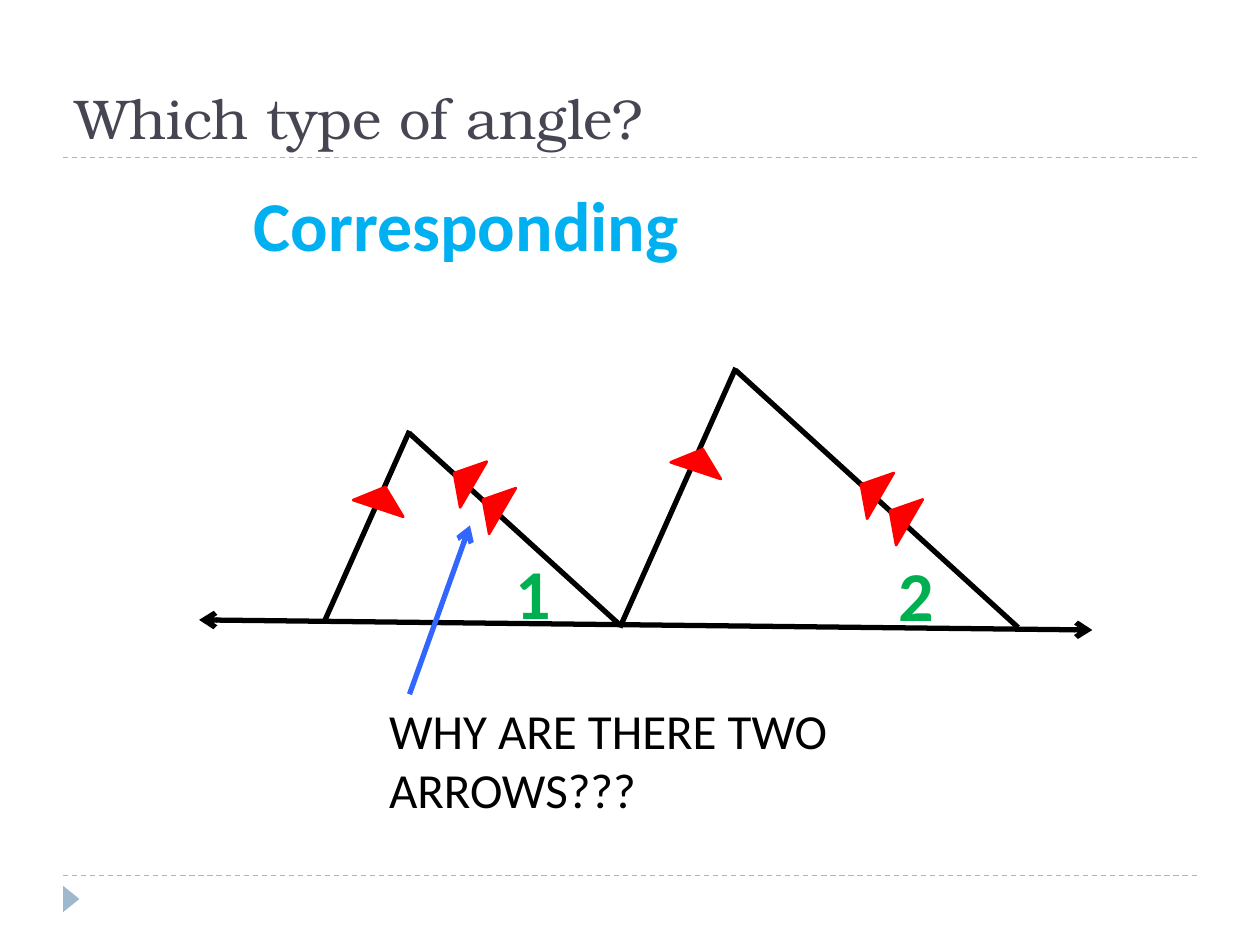
from dataclasses import dataclass

from lxml.etree import SubElement
from pptx import Presentation
from pptx.dml.color import RGBColor
from pptx.enum.dml import MSO_LINE
from pptx.enum.shapes import MSO_CONNECTOR, MSO_SHAPE
from pptx.enum.text import MSO_ANCHOR, MSO_AUTO_SIZE, PP_ALIGN
from pptx.oxml.ns import qn
from pptx.util import Inches, Pt


@dataclass(frozen=True)
class Theme:
    heading_font: str = "TeX Gyre Bonum"
    body_font: str = "Calibri"
    heading: str = "464653"
    rule: str = "9FB8CD"
    ink: str = "000000"
    answer: str = "00B0F0"
    angle: str = "00B050"
    mark: str = "FF0000"
    pointer: str = "3366FF"
    title_size: int = 32
    big_size: int = 40
    question_size: int = 28
    rule_width: float = 0.75
    mark_width: float = 1.5
    stroke_width: float = 3


THEME = Theme()
MARK_SIZE = (0.42, 0.18)


def rgb(colour):
    return RGBColor.from_string(colour)


def add_line(slide, start, end, colour=THEME.ink, width=THEME.stroke_width,
             dash=None, heads=()):
    """Draw a line; heads holds "headEnd" (at start) and/or "tailEnd" (at end)."""
    line = slide.shapes.add_connector(
        MSO_CONNECTOR.STRAIGHT, *(Inches(v) for v in (*start, *end)))
    line.line.color.rgb = rgb(colour)
    line.line.width = Pt(width)
    if dash:
        line.line.dash_style = dash
    properties = line._element.spPr
    for head in heads:
        SubElement(properties.find(qn("a:ln")), qn(f"a:{head}"), type="arrow")
    SubElement(properties, qn("a:effectLst"))


def add_triangle(slide, box, rotation, colour, outlined=True):
    triangle = slide.shapes.add_shape(
        MSO_SHAPE.ISOSCELES_TRIANGLE, *(Inches(v) for v in box))
    triangle.rotation = rotation
    triangle.shadow.inherit = False
    triangle.fill.solid()
    triangle.fill.fore_color.rgb = rgb(colour)
    if outlined:
        triangle.line.color.rgb = rgb(colour)
        triangle.line.width = Pt(THEME.mark_width)
    else:
        triangle.line.fill.background()


def write(paragraph, text, size, colour, font=THEME.body_font, bold=False):
    run = paragraph.add_run()
    run.text = text
    run.font.name = font
    run.font.size = Pt(size)
    run.font.bold = bold
    run.font.color.rgb = rgb(colour)


def add_text(slide, box, text, size, colour, bold=False, align=PP_ALIGN.LEFT):
    frame = slide.shapes.add_textbox(*(Inches(v) for v in box)).text_frame
    frame.word_wrap = True
    frame.auto_size = MSO_AUTO_SIZE.SHAPE_TO_FIT_TEXT
    frame.paragraphs[0].alignment = align
    write(frame.paragraphs[0], text, size, colour, bold=bold)


def add_frame(slide, box):
    """Draw the dashed rules along the top and bottom of box and the corner mark."""
    left, top, width, height = box
    for y in (top, top + height):
        add_line(slide, (left, y), (left + width, y), THEME.rule,
                 THEME.rule_width, MSO_LINE.DASH)
    add_triangle(slide, (left - 0.04, top + height + 0.12, 0.21, 0.13), 90,
                 THEME.rule, outlined=False)


def set_title(slide, box, text):
    title = slide.shapes.title
    title.left, title.top, title.width, title.height = (Inches(v) for v in box)
    frame = title.text_frame
    frame.auto_size = MSO_AUTO_SIZE.NONE
    frame.vertical_anchor = MSO_ANCHOR.BOTTOM
    frame.paragraphs[0].alignment = PP_ALIGN.LEFT
    write(frame.paragraphs[0], text, THEME.title_size, THEME.heading,
          THEME.heading_font)


def add_peak(slide, box, right_drop, left_mark, right_mark, label, label_at):
    """Draw two sides of a triangle in box, their parallel marks and the angle.

    right_drop is how far the right foot lies below the left one.
    Marks and label are placed from the apex.
    """
    left, top, width, height, apex_offset = box
    apex_x = left + apex_offset
    foot = top + height
    add_line(slide, (left, foot), (apex_x, top))
    add_line(slide, (apex_x, top + 0.02), (left + width, foot + right_drop))
    add_text(slide, (apex_x + label_at[0], top + label_at[1], 0.67, 0.77),
             label, THEME.big_size, THEME.angle, bold=True)

    pair_step = (0.23, 0.21)
    second_mark = tuple(a + b for a, b in zip(right_mark, pair_step))
    for (dx, dy), rotation in ((left_mark, 18.4), (right_mark, 300.3),
                               (second_mark, 300.3)):
        add_triangle(slide, (apex_x + dx, top + dy, *MARK_SIZE), rotation,
                     THEME.mark)


def add_diagram(slide, box):
    left, top, width, height = box
    add_line(slide, (left, top + height - 0.08), (left + width, top + height),
             heads=("headEnd", "tailEnd"))
    add_peak(slide, (left + 1, top + 0.5, 2.34, 1.5, 0.67), 0.04,
             (-0.43, 0.44), (0.22, 0.29), "1", (0.74, 0.89))
    add_peak(slide, (left + 3.34, top, 3.16, 2.06, 0.92), 0,
             (-0.5, 0.64), (0.86, 0.88), "2", (1.19, 1.41))


def add_question(slide, box, text, target):
    left, top, width, height = box
    add_text(slide, box, text, THEME.question_size, THEME.ink)
    add_line(slide, (left + 0.26, top), target, THEME.pointer,
             heads=("tailEnd",))


def main():
    deck = Presentation()
    deck.slide_width, deck.slide_height = Inches(10), Inches(7.5)
    slide = deck.slides.add_slide(deck.slide_layouts.get_by_name("Title Only"))

    add_frame(slide, (0.5, 1.25, 9, 5.7))
    set_title(slide, (0.5, 0.17, 9, 1.08), "Which type of angle?")
    add_diagram(slide, (1.58, 2.92, 7.09, 2.08))
    add_text(slide, (1.42, 1.39, 4.56, 0.77), "Corresponding", THEME.big_size,
             THEME.answer, bold=True, align=PP_ALIGN.CENTER)
    add_question(slide, (2.99, 5.51, 4.1, 1.04), "WHY ARE THERE TWO ARROWS???",
                 target=(3.73, 4.17))
    deck.save("out.pptx")


if __name__ == "__main__":
    main()
